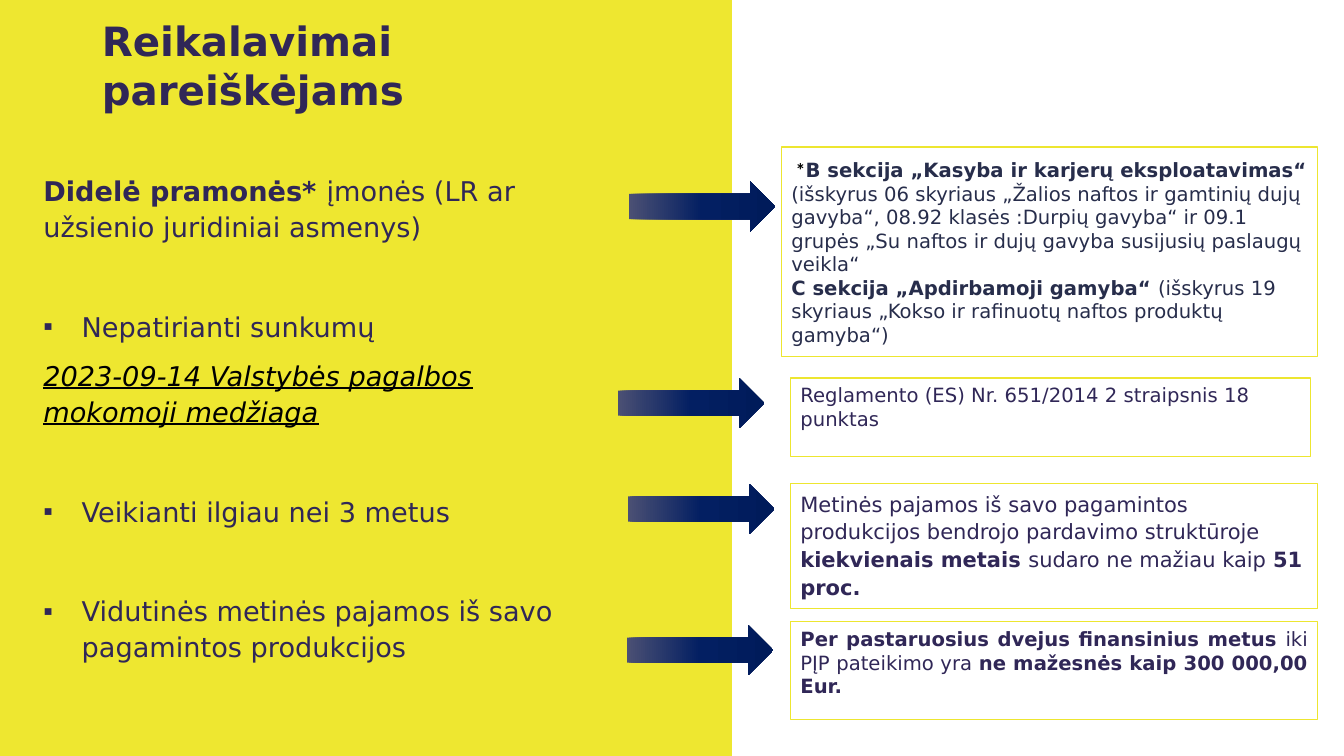
import copy

import pptx
import pptx.dml.color
import pptx.enum.shapes
import pptx.enum.text
import pptx.oxml
import pptx.oxml.ns
import pptx.util

Inches = pptx.util.Inches
Pt = pptx.util.Pt
RGBColor = pptx.dml.color.RGBColor
SHAPE = pptx.enum.shapes.MSO_SHAPE
ANCHOR = pptx.enum.text.MSO_ANCHOR
ALIGN = pptx.enum.text.PP_ALIGN

FONT = "DejaVu Sans"
YELLOW = RGBColor(0xEE, 0xE7, 0x30)
BORDER = RGBColor(0xED, 0xE6, 0x30)
WHITE = RGBColor(0xFF, 0xFF, 0xFF)
BLACK = RGBColor(0x00, 0x00, 0x00)
VIOLET = RGBColor(0x30, 0x27, 0x57)
SLATE = RGBColor(0x27, 0x2D, 0x4B)
ARROW_STOPS = (
    (0, RGBColor(0x4B, 0x50, 0x74)),
    (0.5, RGBColor(0x03, 0x1F, 0x62)),
    (1, RGBColor(0x00, 0x1B, 0x5A)),
)
BULLET_INDENT = 0.38
GAP = 45.5  # points before each new requirement


def add_text(paragraph, text, size=14, color=VIOLET, bold=False,
             italic=False, underline=False, font=FONT):
    run = paragraph.add_run()
    run.text = text
    run.font.name = font
    run.font.size = Pt(size)
    run.font.color.rgb = color
    run.font.bold = bold
    run.font.italic = italic
    run.font.underline = underline


def set_bullet(paragraph, symbol=None):
    """Give a hanging bullet, or clear the inherited one."""
    indent = Inches(BULLET_INDENT) if symbol else 0
    properties = paragraph._p.get_or_add_pPr()
    properties.set("marL", str(indent))
    properties.set("indent", str(-indent))
    tag = "a:buChar" if symbol else "a:buNone"
    bullet = pptx.oxml.parse_xml(f"<{tag} {pptx.oxml.ns.nsdecls('a')}/>")
    if symbol:
        bullet.set("char", symbol)
    properties.append(bullet)


def place(shape, left, top, width, height):
    shape.left, shape.top = Inches(left), Inches(top)
    shape.width, shape.height = Inches(width), Inches(height)


def add_shape(slide, kind, left, top, width, height):
    shape = slide.shapes.add_shape(
        kind, Inches(left), Inches(top), Inches(width), Inches(height))
    shape.shadow.inherit = False
    return shape


def add_panel(slide, left, top, width, height):
    panel = add_shape(slide, SHAPE.RECTANGLE, left, top, width, height)
    panel.fill.solid()
    panel.fill.fore_color.rgb = YELLOW
    panel.line.fill.background()
    slide.shapes._spTree.insert(2, panel._element)  # behind the placeholders


def fill_title(slide, left, top, width, height):
    title = slide.shapes.title
    place(title, left, top, width, height)
    frame = title.text_frame
    frame.auto_size = pptx.enum.text.MSO_AUTO_SIZE.NONE
    frame.vertical_anchor = ANCHOR.MIDDLE
    frame.paragraphs[0].alignment = ALIGN.LEFT
    add_text(frame.paragraphs[0], "Reikalavimai pareiškėjams", size=28.8, bold=True)


def fill_requirements(slide, left, top, width, height):
    body = slide.placeholders[1]
    place(body, left, top, width, height)
    frame = body.text_frame
    frame.auto_size = pptx.enum.text.MSO_AUTO_SIZE.NONE
    requirements = (
        (None, 0, (("Didelė pramonės* ", {"bold": True}),
                   ("įmonės (LR ar užsienio juridiniai asmenys)", {}))),
        ("▪", GAP, (("Nepatirianti sunkumų", {}),)),
        (None, 10, (("2023-09-14 Valstybės pagalbos mokomoji medžiaga",
                     {"color": BLACK, "italic": True, "underline": True}),)),
        ("▪", GAP, (("Veikianti ilgiau nei 3 metus", {}),)),
        ("▪", GAP, (("Vidutinės metinės pajamos iš savo pagamintos produkcijos", {}),)),
    )
    for index, (symbol, before, runs) in enumerate(requirements):
        paragraph = frame.add_paragraph() if index else frame.paragraphs[0]
        set_bullet(paragraph, symbol)
        paragraph.line_spacing = 1.1
        paragraph.space_before = Pt(before)
        for text, style in runs:
            add_text(paragraph, text, size=19.4, **style)


def add_note(slide, box, paragraphs, border=1, anchor=ANCHOR.TOP,
             align=ALIGN.LEFT, spacing=1.0):
    note = add_shape(slide, SHAPE.RECTANGLE, *box)
    note.fill.solid()
    note.fill.fore_color.rgb = WHITE
    note.line.color.rgb = BORDER
    note.line.width = Pt(border)
    frame = note.text_frame
    frame.word_wrap = True
    frame.vertical_anchor = anchor
    for index, runs in enumerate(paragraphs):
        paragraph = frame.add_paragraph() if index else frame.paragraphs[0]
        paragraph.alignment = align
        paragraph.line_spacing = spacing
        for text, style in runs:
            add_text(paragraph, text, **style)


def add_arrow(slide, left, top, width=1.45, height=0.5):
    arrow = add_shape(slide, SHAPE.RIGHT_ARROW, left, top, width, height)
    arrow.line.fill.background()
    arrow.fill.gradient()
    arrow.fill.gradient_angle = 0
    first_stop = arrow._element.spPr.find(".//" + pptx.oxml.ns.qn("a:gs"))
    first_stop.addnext(copy.deepcopy(first_stop))
    for stop, (position, color) in zip(arrow.fill.gradient_stops, ARROW_STOPS):
        stop.position = position
        stop.color.rgb = color


def add_notes_column(slide):
    plain, strong = {"color": SLATE}, {"color": SLATE, "bold": True}
    add_note(slide, (7.75, 1.46, 5.32, 2.08), (
        ((" *", {"font": "Calibri", "color": BLACK, "bold": True}),
         ("B sekcija „Kasyba ir karjerų eksploatavimas“ ", strong),
         ("(išskyrus 06 skyriaus „Žalios naftos ir gamtinių dujų gavyba“, "
          "08.92 klasės :Durpių gavyba“ ir 09.1 grupės „Su naftos ir dujų "
          "gavyba susijusių paslaugų veikla“", plain)),
        (("C sekcija „Apdirbamoji gamyba“ ", strong),
         ("(išskyrus 19 skyriaus „Kokso ir rafinuotų naftos produktų gamyba“)", plain)),
    ), anchor=ANCHOR.MIDDLE)
    add_note(slide, (7.84, 3.75, 5.16, 0.78), (
        (("Reglamento (ES) Nr. 651/2014 2 straipsnis 18 punktas", {}),),
    ))
    add_note(slide, (7.84, 4.8, 5.23, 1.24), (
        (("Metinės pajamos iš savo pagamintos produkcijos bendrojo "
          "pardavimo struktūroje ", {"size": 15}),
         ("kiekvienais metais ", {"size": 15, "bold": True}),
         ("sudaro ne mažiau kaip ", {"size": 15}),
         ("51 proc.", {"size": 15, "bold": True})),
    ), spacing=1.1)
    add_note(slide, (7.84, 6.17, 5.23, 0.97), (
        (("Per pastaruosius dvejus finansinius metus ", {"bold": True}),
         ("iki PĮP pateikimo yra ", {}),
         ("ne mažesnės kaip 300 000,00 Eur.", {"bold": True})),
    ), border=0.75, align=ALIGN.JUSTIFY)


def build_requirements_slide(presentation):
    slide = presentation.slides.add_slide(presentation.slide_layouts[1])
    add_panel(slide, -0.01, 0, 7.27, 7.5)
    fill_title(slide, 0.91, 0.29, 5.62, 0.71)
    fill_requirements(slide, 0.33, 1.65, 5.62, 5.13)
    add_notes_column(slide)
    for left, top in ((6.24, 1.8), (6.13, 3.75), (6.23, 4.8), (6.22, 6.2)):
        add_arrow(slide, left, top)


def main():
    presentation = pptx.Presentation()
    presentation.slide_width = Inches(13.33)
    presentation.slide_height = Inches(7.5)
    build_requirements_slide(presentation)
    presentation.save("out.pptx")


if __name__ == "__main__":
    main()
